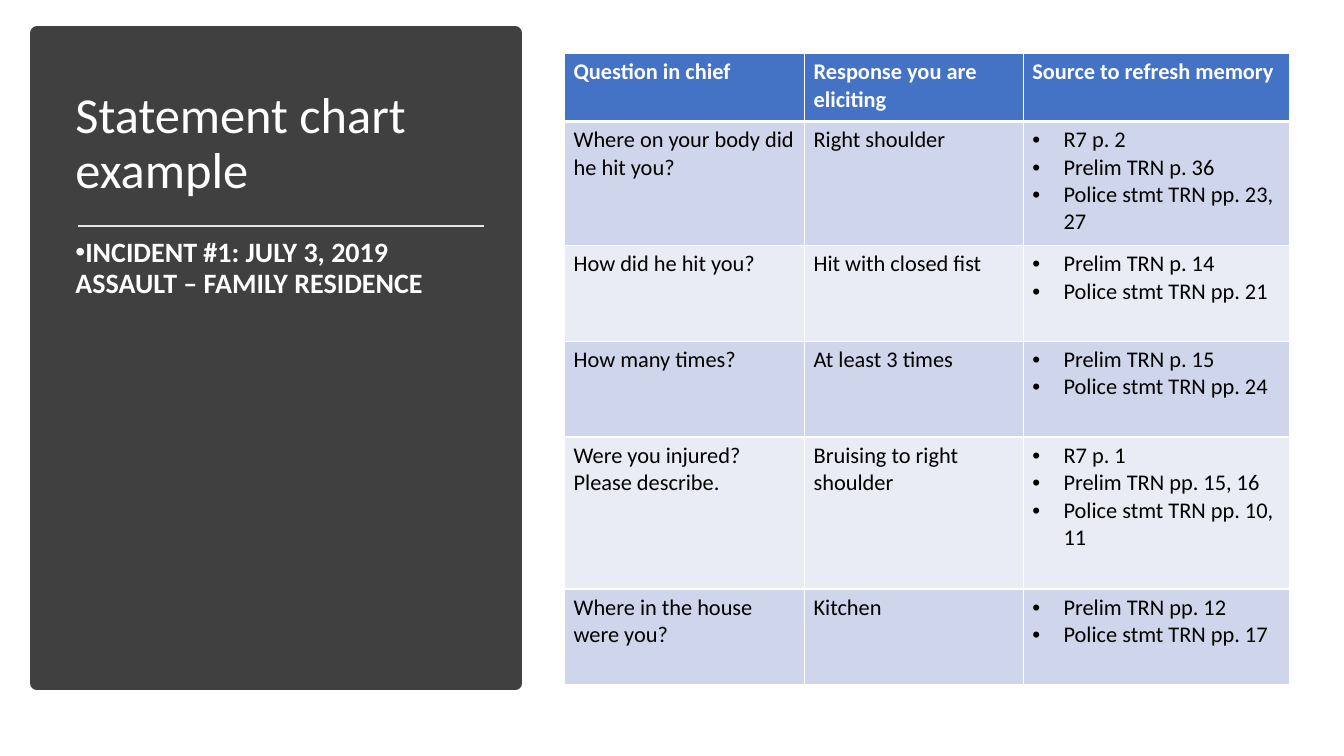
from dataclasses import dataclass

from lxml.etree import SubElement, fromstring
from pptx import Presentation
from pptx.dml.color import RGBColor
from pptx.enum.shapes import MSO_CONNECTOR, MSO_SHAPE
from pptx.enum.text import MSO_ANCHOR
from pptx.oxml.ns import nsdecls, qn
from pptx.util import Inches, Pt


@dataclass(frozen=True)
class Theme:
    font: str = "Calibri"
    panel: str = "404040"
    rule: str = "E7E6E6"
    head: str = "4472C4"
    bands: tuple = ("CFD5EA", "E9EBF5")
    light: str = "FFFFFF"
    dark: str = "000000"
    title: int = 36
    body: int = 20
    cell: int = 16


def unit(count):
    """Length of grid cells; the slide is 160 columns by 90 rows."""
    return Inches(count / 12)


def color(code):
    return RGBColor.from_string(code)


class Board:
    def __init__(self, slide, theme):
        self.shapes = slide.shapes
        self.theme = theme

    def panel(self, *box):
        rect = self.shapes.add_shape(MSO_SHAPE.RECTANGLE, *map(unit, box))
        rect.shadow.inherit = False
        rect.fill.solid()
        rect.fill.fore_color.rgb = color(self.theme.panel)
        rect.line.color.rgb = color(self.theme.panel)
        rect.line.width = Pt(10)

    def rule(self, left, right, top):
        line = self.shapes.add_connector(
            MSO_CONNECTOR.STRAIGHT, *map(unit, (left, top, right, top)))
        line.line.color.rgb = color(self.theme.rule)
        line.line.width = Pt(1.75)
        SubElement(line._element.spPr, qn("a:effectLst"))

    def bullet(self, para, left, hang):
        props = para._p.get_or_add_pPr()
        props.set("marL", str(Inches(left)))
        props.set("indent", str(-Inches(hang)))
        SubElement(props, qn("a:buFont")).set("typeface", "Arial")
        SubElement(props, qn("a:buChar")).set("char", "•")

    def style(self, para, size, ink, bold=False):
        font = para.font
        font.name = self.theme.font
        font.size = Pt(size)
        font.bold = bold
        font.color.rgb = color(ink)

    def text(self, words, box, size, bold=False, anchor=MSO_ANCHOR.TOP, hang=0):
        frame = self.shapes.add_textbox(*map(unit, box)).text_frame
        frame.word_wrap = True
        frame.vertical_anchor = anchor
        para = frame.paragraphs[0]
        para.text = words
        para.line_spacing = 0.9
        if hang:
            para.space_after = Pt(6)
            self.bullet(para, 0, hang)
        self.style(para, size, self.theme.light, bold)

    def border(self, cell, base):
        props = cell._tc.get_or_add_tcPr()
        widths = {"L": 1, "R": 1, "T": 1, "B": base}
        for place, (side, width) in enumerate(widths.items()):
            props.insert(place, fromstring(
                f'<a:ln{side} {nsdecls("a")} w="{Pt(width)}"><a:solidFill>'
                f'<a:srgbClr val="{self.theme.light}"/></a:solidFill></a:ln{side}>'))

    def cell(self, cell, words, fill, ink, head):
        """Fill one table cell; a list of words becomes bullets."""
        cell.margin_left = cell.margin_right = Inches(0.09)
        cell.margin_top = cell.margin_bottom = Inches(0.05)
        cell.fill.solid()
        cell.fill.fore_color.rgb = color(fill)
        self.border(cell, 3 if head else 1)
        listed = isinstance(words, list)
        cell.text_frame.text = "\n".join(words) if listed else words
        for para in cell.text_frame.paragraphs:
            if listed:
                self.bullet(para, 0.31, 0.31)
            self.style(para, self.theme.cell, ink, head)

    def table(self, left, top, cols, rows, data):
        theme = self.theme
        grid = self.shapes.add_table(
            len(rows), len(cols),
            *map(unit, (left, top, sum(cols), sum(rows)))).table
        for col, width in zip(grid.columns, cols):
            col.width = unit(width)
        for row, height in zip(grid.rows, rows):
            row.height = unit(height)
        for r, line in enumerate(data):
            head = r == 0
            fill = theme.head if head else theme.bands[(r - 1) % 2]
            ink = theme.light if head else theme.dark
            for c, words in enumerate(line):
                self.cell(grid.cell(r, c), words, fill, ink, head)


DATA = [
    ("Question in chief", "Response you are eliciting",
     "Source to refresh memory"),
    ("Where on your body did he hit you?", "Right shoulder",
     ["R7 p. 2", "Prelim TRN p. 36", "Police stmt TRN pp. 23, 27"]),
    ("How did he hit you?", "Hit with closed fist",
     ["Prelim TRN p. 14", "Police stmt TRN pp. 21"]),
    ("How many times?", "At least 3 times",
     ["Prelim TRN p. 15", "Police stmt TRN pp. 24"]),
    ("Were you injured? Please describe.", "Bruising to right shoulder",
     ["R7 p. 1", "Prelim TRN pp. 15, 16", "Police stmt TRN pp. 10, 11"]),
    ("Where in the house were you?", "Kitchen",
     ["Prelim TRN pp. 12", "Police stmt TRN pp. 17"]),
]


def main():
    deck = Presentation()
    deck.slide_width, deck.slide_height = Inches(13.33), Inches(7.5)
    theme = Theme()
    board = Board(deck.slides.add_slide(deck.slide_layouts[6]), theme)
    board.panel(4.44, 3.96, 56.88, 77.4)
    board.text("Statement chart example", (7.8, 8.4, 50.16, 17.64),
               theme.title, anchor=MSO_ANCHOR.MIDDLE)
    board.rule(9.24, 57.6, 26.88)
    board.text("INCIDENT #1: JULY 3, 2019 ASSAULT – FAMILY RESIDENCE",
               (7.8, 27.84, 50.16, 49.56), theme.body, bold=True, hang=0.25)
    board.table(67.2, 6.36, (28.56, 26.04, 31.68),
                (8.1, 14.76, 11.4, 11.4, 18.1, 11.4), DATA)
    deck.save("out.pptx")


if __name__ == "__main__":
    main()
